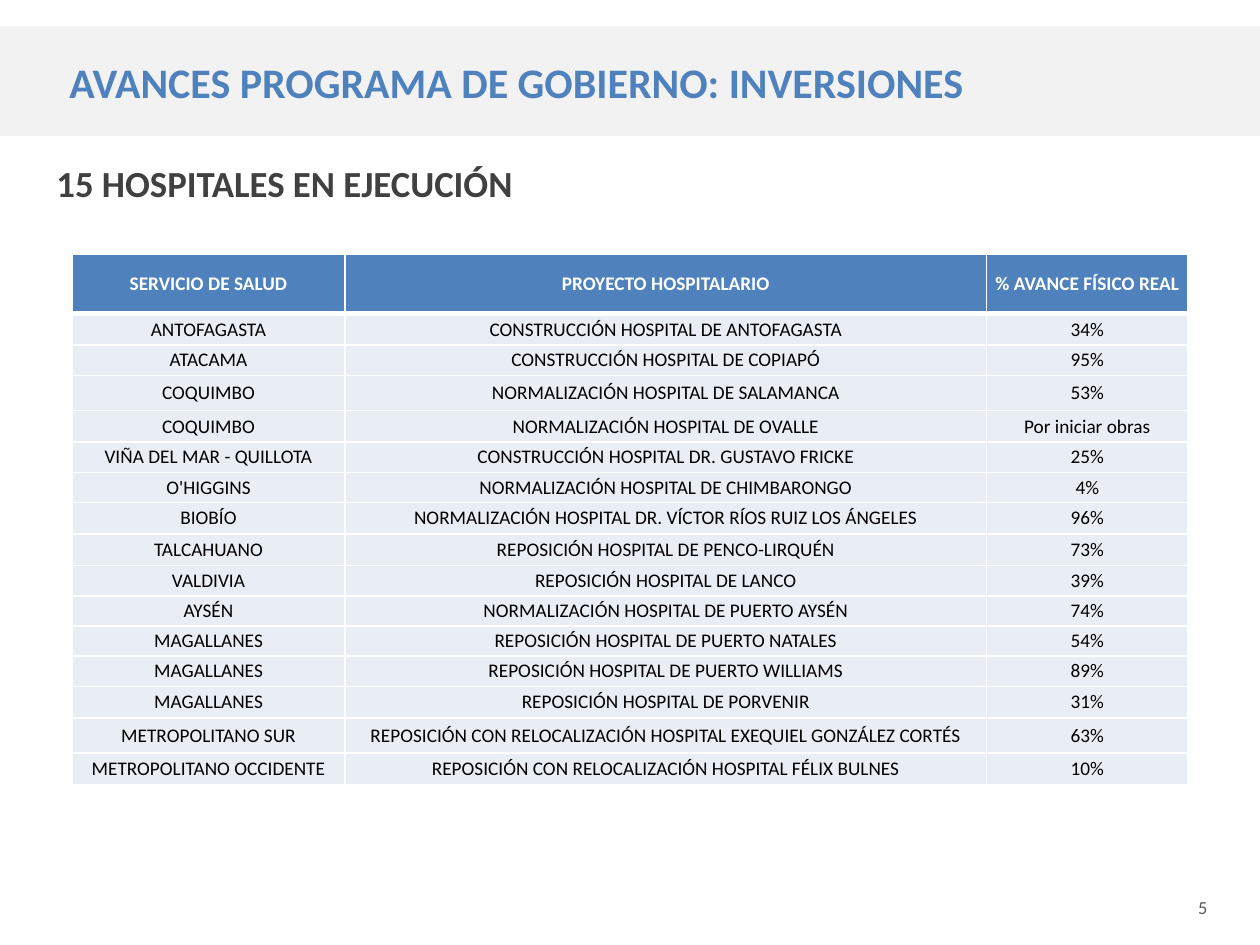
from lxml import etree
from pptx import Presentation
from pptx import util as u
from pptx.dml.color import RGBColor
from pptx.enum import shapes, text
from pptx.oxml.ns import qn

BLUE = RGBColor(0x4F, 0x81, 0xBD)
BAND_GRAY = RGBColor(0xF2, 0xF2, 0xF2)
ROW_GRAY = RGBColor(0xE9, 0xED, 0xF4)
WHITE = RGBColor(0xFF, 0xFF, 0xFF)
BLACK = RGBColor(0, 0, 0)
DARK = RGBColor(0x40, 0x40, 0x40)
MID_GRAY = RGBColor(0x59, 0x59, 0x59)

HEADER = ("SERVICIO DE SALUD", "PROYECTO HOSPITALARIO", "% AVANCE FÍSICO REAL")
HOSPITALS = [
    ("ANTOFAGASTA", "CONSTRUCCIÓN HOSPITAL DE ANTOFAGASTA", "34%"),
    ("ATACAMA", "CONSTRUCCIÓN HOSPITAL DE COPIAPÓ", "95%"),
    ("COQUIMBO", "NORMALIZACIÓN HOSPITAL DE SALAMANCA", "53%"),
    ("COQUIMBO", "NORMALIZACIÓN HOSPITAL DE OVALLE", "Por iniciar obras"),
    ("VIÑA DEL MAR - QUILLOTA", "CONSTRUCCIÓN HOSPITAL DR. GUSTAVO FRICKE", "25%"),
    ("O'HIGGINS", "NORMALIZACIÓN HOSPITAL DE CHIMBARONGO", "4%"),
    ("BIOBÍO", "NORMALIZACIÓN HOSPITAL DR. VÍCTOR RÍOS RUIZ LOS ÁNGELES", "96%"),
    ("TALCAHUANO", "REPOSICIÓN HOSPITAL DE PENCO-LIRQUÉN", "73%"),
    ("VALDIVIA", "REPOSICIÓN HOSPITAL DE LANCO", "39%"),
    ("AYSÉN", "NORMALIZACIÓN HOSPITAL DE PUERTO AYSÉN", "74%"),
    ("MAGALLANES", "REPOSICIÓN HOSPITAL DE PUERTO NATALES", "54%"),
    ("MAGALLANES", "REPOSICIÓN HOSPITAL DE PUERTO WILLIAMS", "89%"),
    ("MAGALLANES", "REPOSICIÓN HOSPITAL DE PORVENIR", "31%"),
    ("METROPOLITANO SUR",
     "REPOSICIÓN CON RELOCALIZACIÓN HOSPITAL EXEQUIEL GONZÁLEZ CORTÉS", "63%"),
    ("METROPOLITANO OCCIDENTE",
     "REPOSICIÓN CON RELOCALIZACIÓN HOSPITAL FÉLIX BULNES", "10%"),
]
COLUMN_WIDTHS = (2.17, 5.09, 1.6)
ROW_HEIGHTS = (0.47, 0.25, 0.24, 0.28, 0.25, 0.24, 0.24, 0.25,
               0.25, 0.24, 0.24, 0.24, 0.24, 0.25, 0.28, 0.25)


def write(frame, words, size, color, bold=False, align=text.PP_ALIGN.LEFT):
    para = frame.paragraphs[0]
    para.alignment = align
    span = para.add_run()
    span.text = words
    span.font.name = "Calibri"
    span.font.size = u.Pt(size)
    span.font.bold = bold
    span.font.color.rgb = color


def add_border(cell, side, points):
    line = etree.SubElement(cell._tc.get_or_add_tcPr(), qn(f"a:ln{side}"),
                            w=str(u.Pt(points)))
    fill = etree.SubElement(line, qn("a:solidFill"))
    etree.SubElement(fill, qn("a:srgbClr"), val=str(WHITE))


deck = Presentation()
deck.slide_width, deck.slide_height = u.Inches(10), u.Inches(7.5)
page = deck.slides.add_slide(deck.slide_layouts[6])

# Title band
band = page.shapes.add_shape(shapes.MSO_SHAPE.RECTANGLE, u.Inches(0),
                             u.Inches(0.21), u.Inches(10), u.Inches(0.87))
band.shadow.inherit = False
band.fill.solid()
band.fill.fore_color.rgb = BAND_GRAY
band.line.fill.background()
band.text_frame.margin_left = u.Inches(0.55)
band.text_frame.vertical_anchor = text.MSO_ANCHOR.MIDDLE
write(band.text_frame, "AVANCES PROGRAMA DE GOBIERNO: INVERSIONES", 24, BLUE, True)

# Subtitle
subtitle = page.shapes.add_textbox(u.Inches(0.35), u.Inches(1.23),
                                   u.Inches(8.93), u.Inches(0.51))
subtitle.text_frame.word_wrap = True
write(subtitle.text_frame, "15 HOSPITALES EN EJECUCIÓN", 21, DARK, True)

# Hospital table
rows = [HEADER] + HOSPITALS
table = page.shapes.add_table(len(rows), len(HEADER), u.Inches(0.57), u.Inches(2.02),
                              u.Inches(sum(COLUMN_WIDTHS)),
                              u.Inches(sum(ROW_HEIGHTS))).table
table.horz_banding = False
for column, width in zip(table.columns, COLUMN_WIDTHS):
    column.width = u.Inches(width)
for r, (values, height) in enumerate(zip(rows, ROW_HEIGHTS)):
    table.rows[r].height = u.Inches(height)
    is_header = r == 0
    for c, value in enumerate(values):
        cell = table.cell(r, c)
        cell.margin_left = cell.margin_right = u.Inches(0)
        cell.margin_top = cell.margin_bottom = u.Inches(0)
        cell.vertical_anchor = text.MSO_ANCHOR.MIDDLE
        for side in "LRTB":
            thick = (is_header and side == "B") or (r == 1 and side == "T")
            add_border(cell, side, 3 if thick else 1)
        cell.fill.solid()
        cell.fill.fore_color.rgb = BLUE if is_header else ROW_GRAY
        write(cell.text_frame, value, 11, WHITE if is_header else BLACK,
              is_header, text.PP_ALIGN.CENTER)

# Page number
number = page.shapes.add_textbox(u.Inches(9.41), u.Inches(7.06),
                                 u.Inches(0.48), u.Inches(0.29))
number.text_frame.word_wrap = True
write(number.text_frame, "5", 10.5, MID_GRAY)

deck.save("out.pptx")
